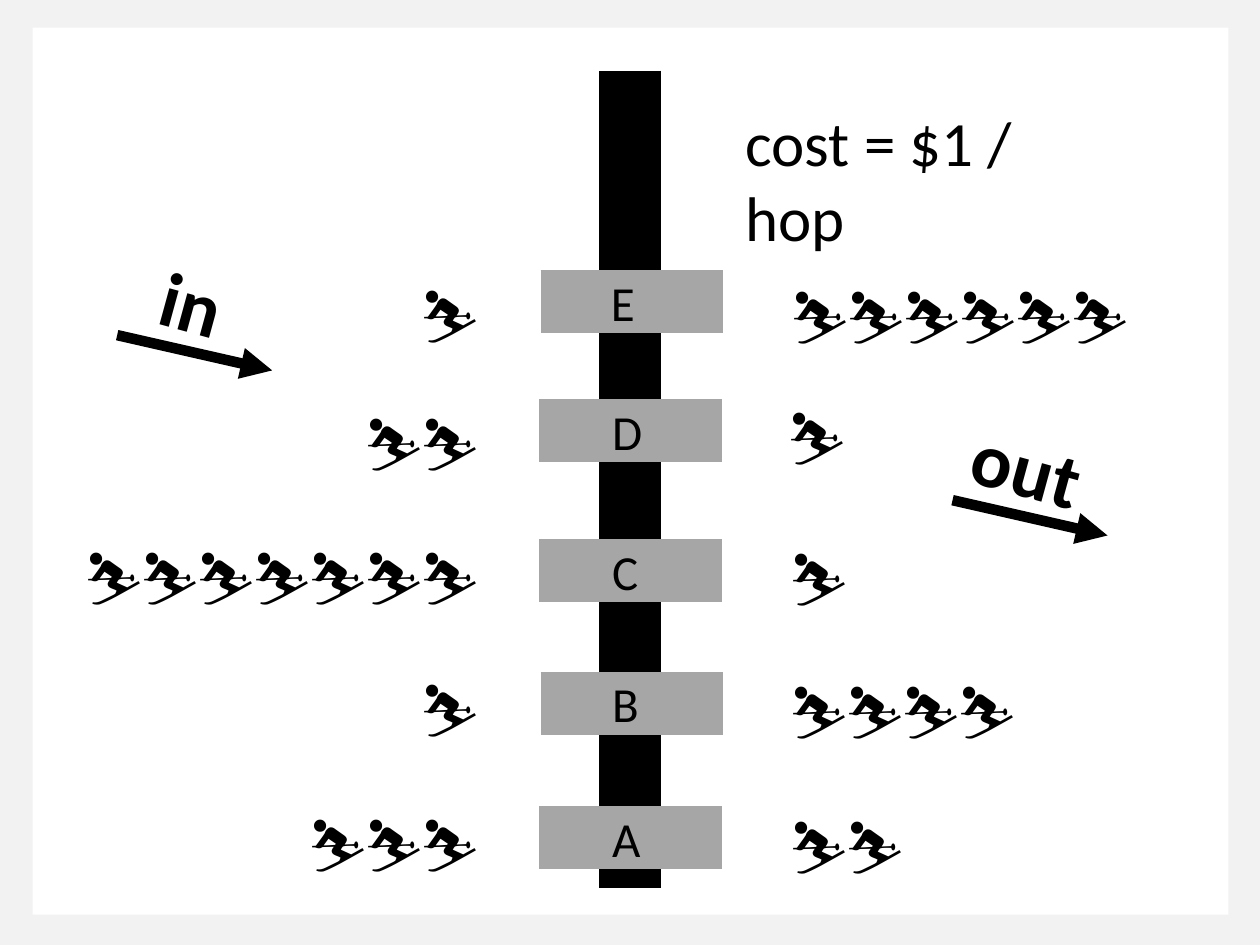
from lxml import etree
from pptx import Presentation
from pptx.dml.color import RGBColor as RGB
from pptx.enum.shapes import MSO_CONNECTOR as Connector, MSO_SHAPE as Preset
from pptx.enum.text import MSO_AUTO_SIZE as AutoSize, PP_ALIGN as Align
from pptx.oxml.ns import qn
from pptx.util import Inches, Pt

# Content
SKIER = "⛷"
# station, bar left, bar y, label left, skiers in, their top, skiers out, their left and top
STATIONS = [
    ("E", 4.29, 2.39, 4.75, 1, 2.15, 6, 6.19, 2.16),
    ("D", 4.28, 3.42, 4.76, 2, 3.17, 1, 6.17, 3.12),
    ("C", 4.28, 4.53, 4.76, 7, 4.23, 1, 6.18, 4.24),
    ("B", 4.29, 5.58, 4.76, 1, 5.28, 4, 6.18, 5.30),
    ("A", 4.28, 6.65, 4.76, 3, 6.35, 2, 6.18, 6.37),
]
COST = "cost = $1 / hop"
# word, text box, arrow start
FLOWS = [
    ("in", (1.19, 1.98, 0.70, 0.84), (0.93, 2.66)),
    ("out", (7.62, 3.29, 1.12, 0.84), (7.56, 3.97)),
]

THEME = {
    "font": "Calibri",
    "background": RGB(0xF2, 0xF2, 0xF2),
    "panel": RGB(0xFF, 0xFF, 0xFF),
    "ink": RGB(0, 0, 0),
    "station": RGB(0xA6, 0xA6, 0xA6),
    "skier_size": 32, "label_size": 28, "cost_size": 36, "flow_size": 44,
    "track_width": 36, "arrow_width": 6,
}

# Layout
SKIER_STEP, BOX_INSETS = 0.445, 0.2
IN_RIGHT = 3.9
BAR_LENGTH = 1.45
ARROW_RUN, ARROW_DROP = 1.23, 0.28
FLOW_ANGLE = 15.3


def add_text(slide, text, box, size, align=Align.LEFT, bold=False, wrap=False):
    shape = slide.shapes.add_textbox(*map(Inches, box))
    frame = shape.text_frame
    frame.word_wrap = wrap
    frame.auto_size = AutoSize.SHAPE_TO_FIT_TEXT
    paragraph = frame.paragraphs[0]
    paragraph.alignment = align
    run = paragraph.add_run()
    run.text = text
    run.font.name = THEME["font"]
    run.font.size = Pt(size)
    run.font.bold = bold
    run.font.color.rgb = THEME["ink"]
    return shape


def add_line(slide, start, end, color, width, arrow=False):
    line = slide.shapes.add_connector(Connector.STRAIGHT, *map(Inches, start + end))
    line.line.color.rgb = color
    line.line.width = Pt(width)
    if arrow:
        etree.SubElement(line.line._get_or_add_ln(), qn("a:tailEnd"), type="triangle")
    etree.SubElement(line._element.spPr, qn("a:effectLst"))


def add_skiers(slide, count, left, top, align):
    width = count * SKIER_STEP + BOX_INSETS
    if align == Align.RIGHT:
        left -= width
    add_text(slide, SKIER * count, (left, top, width, 0.64), THEME["skier_size"], align)


def main():
    presentation = Presentation()
    presentation.slide_width, presentation.slide_height = Inches(10), Inches(7.5)
    slide = presentation.slides.add_slide(presentation.slide_layouts[6])

    # Background and white panel
    slide.background.fill.solid()
    slide.background.fill.fore_color.rgb = THEME["background"]
    panel = slide.shapes.add_shape(
        Preset.RECTANGLE, *map(Inches, (0.26, 0.22, 9.49, 7.04)))
    panel.shadow.inherit = False
    panel.fill.solid()
    panel.fill.fore_color.rgb = THEME["panel"]
    panel.line.fill.background()

    # Track with its stations and skiers
    add_line(slide, (5, 0.56), (5, 7.05), THEME["ink"], THEME["track_width"])
    for (name, bar_left, bar_y, label_left, arriving, in_top,
         leaving, out_left, out_top) in STATIONS:
        add_line(slide, (bar_left, bar_y), (bar_left + BAR_LENGTH, bar_y),
                 THEME["station"], THEME["track_width"])
        add_text(slide, name, (label_left, bar_y - 0.28, 0.45, 0.57), THEME["label_size"])
        add_skiers(slide, arriving, IN_RIGHT, in_top, Align.RIGHT)
        add_skiers(slide, leaving, out_left, out_top, Align.LEFT)

    # Cost note
    add_text(slide, COST, (5.82, 0.77, 3.1, 1.31), THEME["cost_size"], wrap=True)

    # Flow arrows with tilted words
    for word, box, (x, y) in FLOWS:
        add_line(slide, (x, y), (x + ARROW_RUN, y + ARROW_DROP),
                 THEME["ink"], THEME["arrow_width"], arrow=True)
        add_text(slide, word, box, THEME["flow_size"], bold=True).rotation = FLOW_ANGLE

    presentation.save("out.pptx")


if __name__ == "__main__":
    main()
